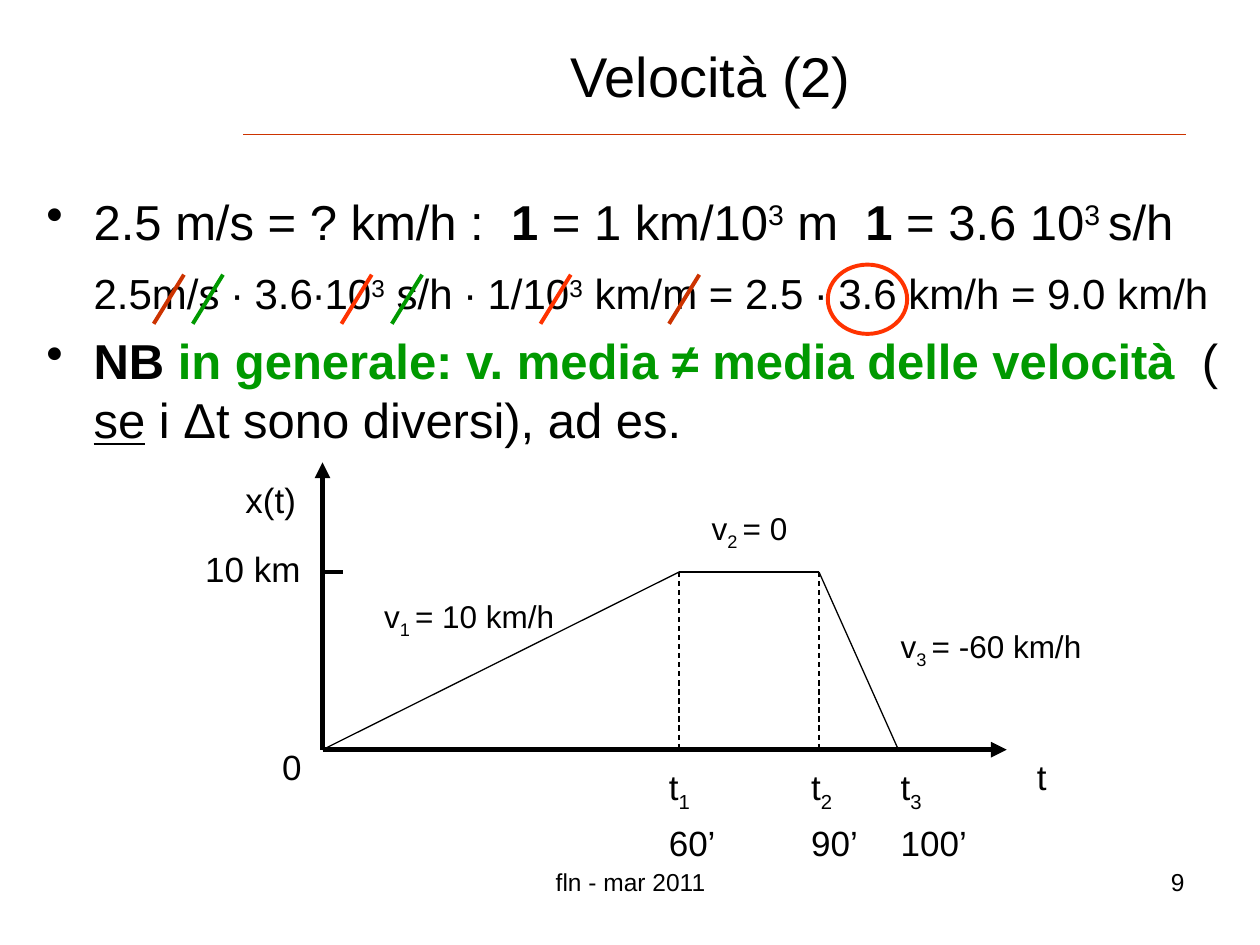
"""Build the slide on average velocity."""
from dataclasses import dataclass
from typing import NamedTuple

from pptx import Presentation
from pptx.dml.color import RGBColor
from pptx.enum.dml import MSO_LINE as Dash
from pptx.enum.shapes import MSO_CONNECTOR as Link, MSO_SHAPE as Form
from pptx.enum.text import MSO_ANCHOR as Anchor, PP_ALIGN as Align
from pptx.oxml.xmlchemy import OxmlElement as Node
from pptx.util import Inches, Pt

BLACK = RGBColor(0x00, 0x00, 0x00)
GREEN = RGBColor(0x00, 0x99, 0x00)
BRICK = RGBColor(0xCC, 0x33, 0x00)
RED = RGBColor(0xFF, 0x33, 0x00)

WIDE, HIGH = Inches(10), Inches(7.5)
COL, ROW = WIDE / 100, HIGH / 75


class Bit(NamedTuple):
    """A run of text with its own look."""
    text: str
    bold: bool = False
    base: int = 0
    under: bool = False
    color: RGBColor = BLACK


class Para(NamedTuple):
    """A paragraph; a hang above zero indents it."""
    bits: list[Bit]
    size: float
    gap: float = 0
    hang: float = 0
    dot: bool = False


@dataclass
class Box:
    """A text box on the grid."""
    x: float
    y: float
    w: float
    h: float
    paras: list[Para]
    align: Align = Align.LEFT
    anchor: Anchor = Anchor.TOP
    wrap: bool = True


@dataclass
class Line:
    """A straight line on the grid."""
    start: tuple[float, float]
    end: tuple[float, float]
    width: float = 0.75
    color: RGBColor = BLACK
    arrow: bool = False
    dash: bool = False


def place(x: float, y: float) -> tuple[int, int]:
    """Turn columns and rows into lengths."""
    return round(x * COL), round(y * ROW)


def draw_line(shapes, line: Line) -> None:
    """Draw one line."""
    link = shapes.add_connector(Link.STRAIGHT, *place(*line.start), *place(*line.end))
    link.line.width = Pt(line.width)
    link.line.color.rgb = line.color
    if line.dash:
        link.line.dash_style = Dash.DASH
    if line.arrow:
        tip = Node("a:tailEnd")
        tip.set("type", "triangle")
        link.line._get_or_add_ln().append(tip)
    link._element.spPr.append(Node("a:effectLst"))


def fill_para(para, data: Para) -> None:
    """Write the runs of one paragraph."""
    props = para._p.get_or_add_pPr()
    if data.hang:
        hang = round(data.hang * COL)
        props.set("marL", str(hang))
        props.set("indent", str(-hang if data.dot else 0))
    para.space_before = Pt(data.gap)
    if data.dot:
        mark = Node("a:buChar")
        mark.set("char", "•")
        props.append(mark)
    for bit in data.bits:
        run = para.add_run()
        run.text = bit.text
        font = run.font
        font.name, font.size = "Arial", Pt(data.size)
        font.bold, font.underline = bit.bold, bit.under
        font.color.rgb = bit.color
        if bit.base:
            run._r.get_or_add_rPr().set("baseline", str(bit.base * 1000))


def draw_box(shapes, box: Box) -> None:
    """Draw one text box."""
    frame = shapes.add_textbox(*place(box.x, box.y), *place(box.w, box.h)).text_frame
    frame.word_wrap = box.wrap
    frame.vertical_anchor = box.anchor
    for i, data in enumerate(box.paras):
        para = frame.add_paragraph() if i else frame.paragraphs[0]
        para.alignment = box.align
        fill_para(para, data)


def label(x: float, y: float, w: float, text: str) -> Box:
    """Make a plain axis label."""
    return Box(x, y, w, 4.3, [Para([Bit(text)], 20)], wrap=False)


def speed(x: float, y: float, w: float, num: str, text: str) -> Box:
    """Make a label for the speed of one stretch."""
    bits = [Bit("v"), Bit(num + " ", base=-25), Bit(text)]
    return Box(x, y, w, 4, [Para(bits, 18)], wrap=False)


def time(x: float, w: float, num: str, text: str) -> Box:
    """Make a label for one time on the axis."""
    head = Para([Bit("t"), Bit(num, base=-25)], 20)
    return Box(x, 60.3, w, 7.7, [head, Para([Bit(text)], 20, 4.6)], wrap=False)


def main() -> None:
    """Build and save the slide."""
    deck = Presentation()
    deck.slide_width, deck.slide_height = WIDE, HIGH
    shapes = deck.slides.add_slide(deck.slide_layouts[6]).shapes

    cube = Bit("3", base=30)
    body = [
        Para([Bit("2.5 m/s = ? km/h :  "), Bit("1", True), Bit(" = 1 km/10"), cube,
              Bit(" m  "), Bit("1", True), Bit(" = 3.6 10"), Bit("3 ", base=30),
              Bit("s/h")], 28, hang=3.75, dot=True),
        Para([Bit("2.5m/s ∙ 3.6∙10"), cube, Bit(" s/h ∙ 1/10"), cube,
              Bit(" km/m = 2.5 ∙ 3.6 km/h = 9.0 km/h")], 24, 10, 3.75),
        Para([Bit("NB", True),
              Bit(" in generale: v. media ≠ media delle velocità", True, color=GREEN),
              Bit("  ( "), Bit("se", under=True),
              Bit(" i Δt sono diversi), ad es.")], 28, 7.3, 3.75, True),
    ]
    zero, base, top = 25.6, 59.5, 45.4
    first, second, third = 53.9, 65, 71.3
    trip = [(zero, base), (first, top), (second, top), (third, base)]
    cuts = [(14.6, BRICK), (17.7, GREEN), (33.5, GREEN),
            (29.5, RED), (45.3, RED), (55.5, BRICK)]

    boxes = [
        Box(34.2, 68.3, 31.7, 5.2, [Para([Bit("fln - mar 2011")], 14)], Align.CENTER),
        Box(71.7, 68.3, 23.3, 5.2, [Para([Bit("9")], 14)], Align.RIGHT),
        Box(18.5, 2.8, 75.8, 6.3, [Para([Bit("Velocità (2)")], 32)],
            Align.CENTER, Anchor.MIDDLE),
        Box(2.7, 14.7, 95.3, 52.3, body),
        label(18.5, 37.5, 6, "x(t)"),
        label(81.3, 59.5, 2.8, "t"),
        label(21.4, 58.7, 3.6, "0"),
        label(15.3, 43, 9.6, "10 km"),
        time(52.1, 5.7, "1", "60’"),
        time(63.4, 5.7, "2", "90’"),
        time(70.5, 7.3, "3", "100’"),
        speed(29.5, 46.9, 15.7, "1", "= 10 km/h"),
        speed(55.5, 39.9, 8.7, "2", "= 0"),
        speed(70.5, 49.3, 18.1, "3", "= -60 km/h"),
    ]
    lines = [
        Line((19.3, 10.7), (94.1, 10.7), color=BRICK),
        *(Line((x, 21.8), (x - 2.4, 25.7), 2.25, color) for x, color in cuts),
        Line((zero, base), (zero, 36.7), 3, arrow=True),
        Line((zero, base), (79.9, base), 3, arrow=True),
        *(Line(a, b) for a, b in zip(trip, trip[1:])),
        Line((zero, top), (zero + 1.6, top), 2.25),
        *(Line((x, top), (x, base), dash=True) for x in (first, second)),
    ]
    for box in boxes:
        draw_box(shapes, box)
    for line in lines:
        draw_line(shapes, line)

    ring = shapes.add_shape(Form.OVAL, *place(65.7, 21), *place(6.3, 5.5))
    ring.shadow.inherit = False
    ring.fill.background()
    ring.line.color.rgb = RED
    ring.line.width = Pt(2.25)
    deck.save("out.pptx")


if __name__ == "__main__":
    main()
